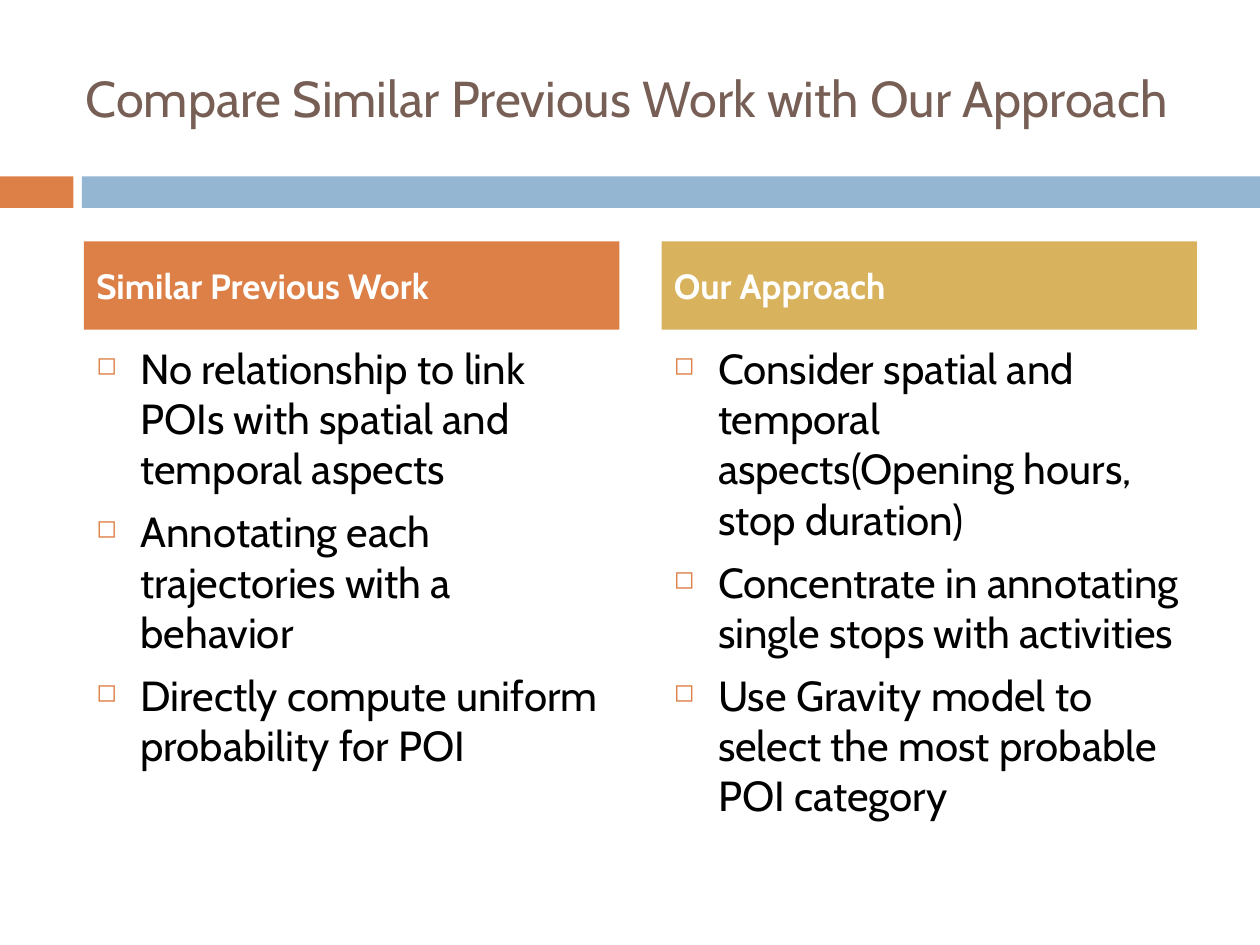
from dataclasses import dataclass

import pptx
import pptx.dml.color
import pptx.enum.shapes
import pptx.enum.text
import pptx.oxml
import pptx.oxml.ns
import pptx.util


@dataclass(frozen=True)
class Theme:
    font: str = "Cabin"
    orange: str = "DD8047"
    blue: str = "94B6D2"
    gold: str = "D8B25C"
    brown: str = "775F55"
    white: str = "FFFFFF"
    black: str = "000000"
    title_size: float = 28.8
    heading_size: float = 20
    body_size: float = 24
    space_before: float = 7
    bullet_indent: float = 0.35


@dataclass(frozen=True)
class Area:
    """A place on a grid of 120 columns by 90 rows."""
    column: float
    row: float
    columns: float
    rows: float

    def place(self) -> tuple:
        cell = pptx.util.Inches(10) / 120
        return tuple(pptx.util.Emu(round(n * cell)) for n in
                     (self.column, self.row, self.columns, self.rows))


@dataclass(frozen=True)
class Comparison:
    heading: str
    color: str
    column: float
    points: tuple


THEME = Theme()
COMPARISONS = (
    Comparison("Similar Previous Work", THEME.orange, 8, (
        "No relationship to link POIs with spatial and temporal aspects",
        "Annotating each trajectories with a behavior",
        "Directly compute uniform probability for POI",
    )),
    Comparison("Our Approach", THEME.gold, 63, (
        "Consider spatial and temporal aspects(Opening hours, stop duration)",
        "Concentrate in annotating single stops with activities",
        "Use Gravity model to select the most probable POI category",
    )),
)


def rgb(color: str) -> pptx.dml.color.RGBColor:
    return pptx.dml.color.RGBColor.from_string(color)


def add_bar(slide, area: Area, color: str):
    bar = slide.shapes.add_shape(
        pptx.enum.shapes.MSO_SHAPE.RECTANGLE, *area.place())
    bar.shadow.inherit = False
    bar.fill.solid()
    bar.fill.fore_color.rgb = rgb(color)
    bar.line.fill.background()
    return bar


def add_bullet(para) -> None:
    indent = pptx.util.Inches(THEME.bullet_indent)
    properties = para._p.get_or_add_pPr()
    properties.set("marL", str(indent))
    properties.set("indent", str(-indent))
    namespace = pptx.oxml.ns.nsdecls("a")
    for markup in (
        f'<a:buClr {namespace}><a:srgbClr val="{THEME.orange}"/></a:buClr>',
        f'<a:buSzPct {namespace} val="60000"/>',
        f'<a:buChar {namespace} char="◻"/>',
    ):
        properties.append(pptx.oxml.parse_xml(markup))


def write(box, lines: tuple, size: float, color: str, bold: bool = False,
          middle: bool = False, bullets: bool = False) -> None:
    frame = box.text_frame
    frame.word_wrap = True
    anchor = pptx.enum.text.MSO_ANCHOR
    frame.vertical_anchor = anchor.MIDDLE if middle else anchor.TOP
    for index, line in enumerate(lines):
        para = frame.add_paragraph() if index else frame.paragraphs[0]
        para.alignment = pptx.enum.text.PP_ALIGN.LEFT
        para.space_before = pptx.util.Pt(THEME.space_before)
        if bullets:
            add_bullet(para)
        span = para.add_run()
        span.text = line
        span.font.name = THEME.font
        span.font.size = pptx.util.Pt(size)
        span.font.bold = bold
        span.font.color.rgb = rgb(color)


def add_comparison(slide, comparison: Comparison) -> None:
    heading = add_bar(slide, Area(comparison.column, 23, 51, 8.4), comparison.color)
    write(heading, (comparison.heading,), THEME.heading_size, THEME.white,
          bold=True, middle=True)
    body = slide.shapes.add_textbox(*Area(comparison.column, 32, 51, 47).place())
    write(body, comparison.points, THEME.body_size, THEME.black, bullets=True)


def main() -> None:
    deck = pptx.Presentation()
    deck.slide_width = pptx.util.Inches(10)
    deck.slide_height = pptx.util.Inches(7.5)
    slide = deck.slides.add_slide(deck.slide_layouts[6])

    # Divider band
    add_bar(slide, Area(0, 16.8, 7, 3), THEME.orange)
    add_bar(slide, Area(7.8, 16.8, 112.2, 3), THEME.blue)

    # Title
    title = slide.shapes.add_textbox(*Area(7, 3.6, 107, 11.4).place())
    write(title, ("Compare Similar Previous Work with Our Approach",),
          THEME.title_size, THEME.brown, middle=True)

    # Two compared columns
    for comparison in COMPARISONS:
        add_comparison(slide, comparison)

    deck.save("out.pptx")


if __name__ == "__main__":
    main()
